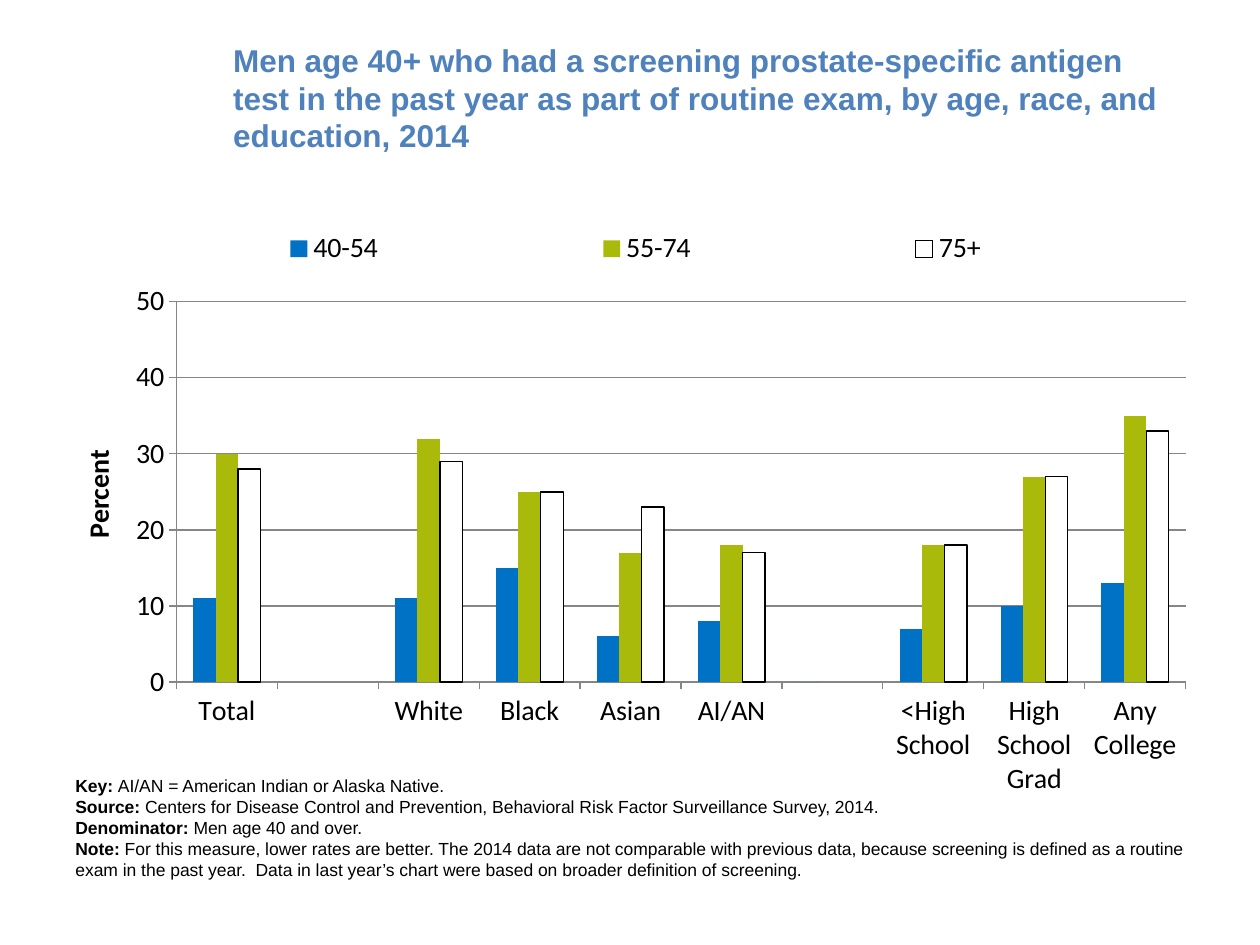
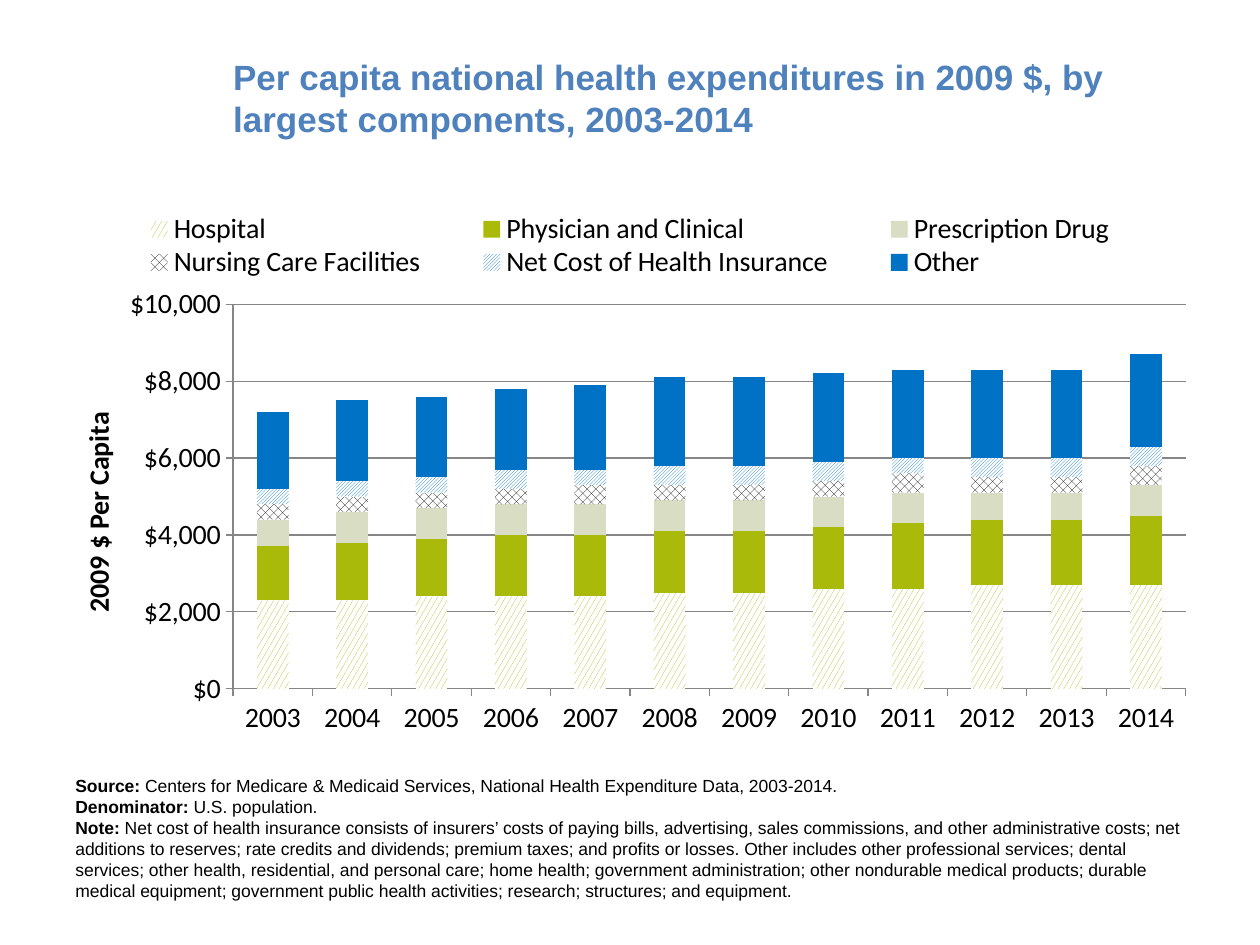
import pptx
import pptx.chart.data
import pptx.dml.color
import pptx.enum.chart
import pptx.enum.dml
import pptx.enum.text
import pptx.oxml
import pptx.oxml.ns
import pptx.util

Cm, Pt = pptx.util.Cm, pptx.util.Pt
XL, PATTERN = pptx.enum.chart, pptx.enum.dml.MSO_PATTERN

# Shared colours and text formats
BLUE, GREEN, SAGE = "0072C6", "AABA0A", "D9DDC3"
BLACK, WHITE, GREY, HEADING = "000000", "FFFFFF", "868686", "4F81BD"
HEADING_FORMAT = {"name": "Arial", "bold": True}
FOOTNOTE_FORMAT = {"name": "Arial", "size": Pt(10)}
LABEL_FORMAT = {"name": "Calibri", "size": Pt(16), "bold": False}
AXIS_TITLE_FORMAT = LABEL_FORMAT | {"bold": True}


def rgb(hex_colour):
    return pptx.dml.color.RGBColor.from_string(hex_colour)


def set_layout(parent, index, fractions, inner=False):
    """Fix the place (x, y) and any size (w, h) of a chart part, as fractions of the chart."""
    for old in parent.findall(pptx.oxml.ns.qn("c:layout")):
        parent.remove(old)
    target = '<c:layoutTarget val="inner"/>' if inner else ""
    modes = '<c:xMode val="edge"/><c:yMode val="edge"/>'
    sizes = "".join(f'<c:{key} val="{value}"/>' for key, value in zip("xywh", fractions))
    parent.insert(index, pptx.oxml.parse_xml(
        f'<c:layout {pptx.oxml.ns.nsdecls("c")}><c:manualLayout>'
        f'{target}{modes}{sizes}</c:manualLayout></c:layout>'))


# Content: a series is (name, fill, values); a pattern fill is (pattern, colour)
screening = {
    "heading": "Men age 40+ who had a screening prostate-specific antigen test in the past year "
               "as part of routine exam, by age, race, and education, 2014",
    "heading_size": 18,
    "kind": XL.XL_CHART_TYPE.COLUMN_CLUSTERED,
    "overlap": 0,
    "top": 4.45, "height": 12.57,
    "plot": (0.1, 0.13, 0.89, 0.61),
    "legend": (0.01, 0, 0.99, 0.09),
    "axis_title": "Percent",
    "axis_title_place": (0.01, 0.36),
    "scale": {"minimum_scale": 0, "maximum_scale": 50, "major_unit": 10},
    "number_format": "0",
    "categories": ["Total", "", "White", "Black", "Asian", "AI/AN", "",
                   "<High School", "High School Grad", "Any College"],
    "series": [
        ("40-54", BLUE, [11, None, 11, 15, 6, 8, 0, 7, 10, 13]),
        ("55-74", GREEN, [30, None, 32, 25, 17, 18, None, 18, 27, 35]),
        ("75+", WHITE, [28, None, 29, 25, 23, 17, None, 18, 27, 33]),
    ],
    "notes_height": 2.39,
    "notes": [
        ("Key:", "AI/AN = American Indian or Alaska Native."),
        ("Source:", "Centers for Disease Control and Prevention, Behavioral Risk Factor "
                    "Surveillance Survey, 2014."),
        ("Denominator:", "Men age 40 and over."),
        ("Note:", "For this measure, lower rates are better. The 2014 data are not comparable "
                  "with previous data, because screening is defined as a routine exam in the past "
                  "year.  Data in last year’s chart were based on broader definition of screening."),
    ],
}
spending = {
    "heading": "Per capita national health expenditures in 2009 $, by largest components, 2003-2014",
    "heading_size": 20,
    "kind": XL.XL_CHART_TYPE.COLUMN_STACKED,
    "overlap": 100,
    "top": 4.06, "height": 10.92,
    "plot": (0.15, 0.19, 0.84, 0.71),
    "legend": (0.03, 0.02, 0.94, 0.12),
    "axis_title": "2009 $ Per Capita",
    "axis_title_place": (0.01, 0.38),
    "scale": {"minimum_scale": 0, "maximum_scale": 10000, "major_unit": 2000},
    "number_format": '"$"#,##0',
    "categories": [str(year) for year in range(2003, 2015)],
    "series": [
        ("Hospital", (PATTERN.LARGE_CONFETTI, GREEN),
         [2300, 2300, 2400, 2400, 2400, 2500, 2500, 2600, 2600, 2700, 2700, 2700]),
        ("Physician and Clinical", GREEN,
         [1400, 1500, 1500, 1600, 1600, 1600, 1600, 1600, 1700, 1700, 1700, 1800]),
        ("Prescription Drug", SAGE,
         [700, 800, 800, 800, 800, 800, 800, 800, 800, 700, 700, 800]),
        ("Nursing Care Facilities", (PATTERN.PERCENT_50, BLACK),
         [400, 400, 400, 400, 500, 400, 400, 400, 500, 400, 400, 500]),
        ("Net Cost of Health Insurance", (PATTERN.LIGHT_UPWARD_DIAGONAL, BLUE),
         [400, 400, 400, 500, 400, 500, 500, 500, 400, 500, 500, 500]),
        ("Other", BLUE,
         [2000, 2100, 2100, 2100, 2200, 2300, 2300, 2300, 2300, 2300, 2300, 2400]),
    ],
    "notes_height": 3.25,
    "notes": [
        ("Source:", "Centers for Medicare & Medicaid Services, National Health Expenditure Data, "
                    "2003-2014."),
        ("Denominator:", "U.S. population."),
        ("Note:", "Net cost of health insurance consists of insurers’ costs of paying bills, "
                  "advertising, sales commissions, and other administrative costs; net additions to "
                  "reserves; rate credits and dividends; premium taxes; and profits or losses. Other "
                  "includes other professional services; dental services; other health, residential, "
                  "and personal care; home health; government administration; other nondurable "
                  "medical products; durable medical equipment; government public health "
                  "activities; research; structures; and equipment."),
    ],
}

deck = pptx.Presentation()
deck.slide_width, deck.slide_height = Cm(25.4), Cm(19.05)

for topic in (screening, spending):
    slide = deck.slides.add_slide(deck.slide_layouts[6])
    fonts = []  # (font, format, colour), applied at the end of the slide

    # Heading
    heading = slide.shapes.add_textbox(Cm(4.45), Cm(0.76), Cm(19.69), Cm(2.41)).text_frame
    heading.word_wrap = True
    heading.vertical_anchor = pptx.enum.text.MSO_ANCHOR.MIDDLE
    heading.text = topic["heading"]
    heading_format = HEADING_FORMAT | {"size": Pt(topic["heading_size"])}
    fonts.append((heading.paragraphs[0].runs[0].font, heading_format, HEADING))

    # Columns
    data = pptx.chart.data.CategoryChartData()
    data.categories = topic["categories"]
    for name, fill, values in topic["series"]:
        data.add_series(name, values)
    chart = slide.shapes.add_chart(topic["kind"], Cm(1.27), Cm(topic["top"]), Cm(22.86),
                                   Cm(topic["height"]), data).chart
    chart.has_title = False
    columns = chart.plots[0]
    columns.gap_width, columns.overlap = 150, topic["overlap"]
    columns.vary_by_categories = False
    for series, (name, fill, values) in zip(columns.series, topic["series"]):
        series.invert_if_negative = False
        paint = series.format.fill
        if isinstance(fill, tuple):
            paint.patterned()
            paint.pattern = fill[0]
            paint.fore_color.rgb, paint.back_color.rgb = rgb(fill[1]), rgb(WHITE)
        else:
            paint.solid()
            paint.fore_color.rgb = rgb(fill)
        if fill == WHITE:
            series.format.line.color.rgb = rgb(BLACK)
            series.format.line.width = Pt(0.75)

    # Axes
    amounts = chart.value_axis
    for key, value in topic["scale"].items():
        setattr(amounts, key, value)
    amounts.tick_labels.number_format = topic["number_format"]
    amounts.tick_labels.number_format_is_linked = False
    amounts.has_major_gridlines = True
    amounts.axis_title.text_frame.text = topic["axis_title"]
    axis_run = amounts.axis_title.text_frame.paragraphs[0].runs[0]
    fonts.append((axis_run.font, AXIS_TITLE_FORMAT, BLACK))
    for axis in (chart.category_axis, amounts):
        axis.major_tick_mark = XL.XL_TICK_MARK.OUTSIDE
        axis.minor_tick_mark = XL.XL_TICK_MARK.NONE
        fonts.append((axis.tick_labels.font, LABEL_FORMAT, BLACK))
    for lined in (chart.category_axis, amounts, amounts.major_gridlines):
        lined.format.line.color.rgb = rgb(GREY)
        lined.format.line.width = Pt(0.75)

    # Legend, axis title and plot places
    chart.has_legend = True
    chart.legend.position = XL.XL_LEGEND_POSITION.TOP
    chart.legend.include_in_layout = False
    fonts.append((chart.legend.font, LABEL_FORMAT, BLACK))
    set_layout(chart.element.xpath(".//c:legend")[0], 1, topic["legend"])
    set_layout(chart.element.xpath(".//c:valAx/c:title")[0], 1, topic["axis_title_place"])
    set_layout(chart.element.xpath(".//c:plotArea")[0], 0, topic["plot"], inner=True)

    # Footnotes
    notes = slide.shapes.add_textbox(Cm(1.27), Cm(15.49), Cm(22.86),
                                     Cm(topic["notes_height"])).text_frame
    notes.word_wrap = True
    notes.auto_size = pptx.enum.text.MSO_AUTO_SIZE.SHAPE_TO_FIT_TEXT
    for number, (term, sentence) in enumerate(topic["notes"]):
        line = notes.add_paragraph() if number else notes.paragraphs[0]
        for words, bold in ((term + " ", True), (sentence, False)):
            run = line.add_run()
            run.text = words
            fonts.append((run.font, FOOTNOTE_FORMAT | {"bold": bold}, BLACK))

    # Text formats
    for font, formats, colour in fonts:
        for key, value in formats.items():
            setattr(font, key, value)
        font.color.rgb = rgb(colour)

deck.save("out.pptx")
